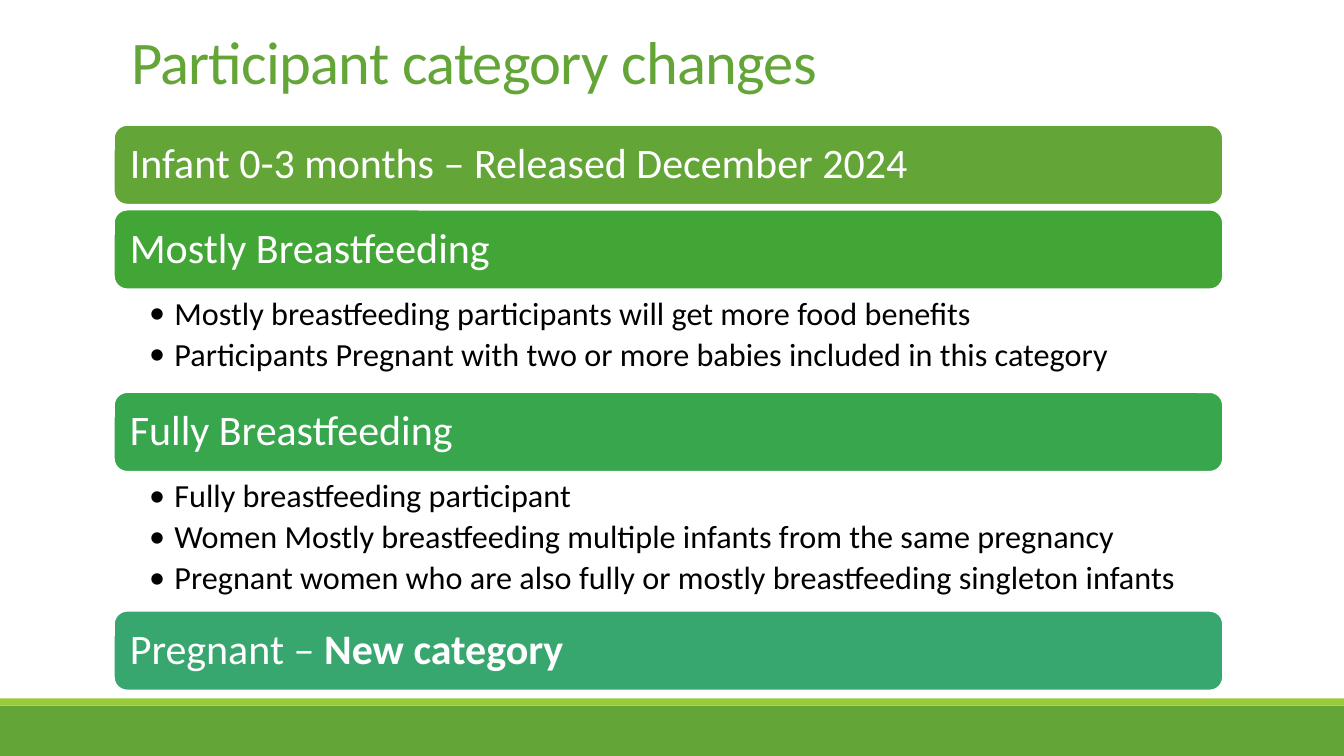
from dataclasses import dataclass
from typing import Any

from lxml.etree import SubElement as Sub
from pptx import Presentation
from pptx.dml.color import RGBColor as RGB
from pptx.enum.shapes import MSO_SHAPE as Kind
from pptx.enum.text import MSO_ANCHOR as Anchor, MSO_AUTO_SIZE as Fit, PP_ALIGN as Align
from pptx.oxml.ns import qn
from pptx.util import Inches, Pt

HUES = {
    "leaf": "63A537", "lime": "99CB38", "grass": "42A637", "fern": "37A64D",
    "jade": "37A76F", "white": "FFFFFF", "black": "000000",
}
LEFT, WIDE, HIGH, GAP = 1.13, 11, 0.79, 0.04


@dataclass(frozen=True)
class Band:
    """A coloured heading with the points listed below it."""
    top: float
    hue: str
    head: str
    bold: str = ""
    tall: float = 0
    points: tuple[str, ...] = ()


BANDS = (
    Band(1.24, "leaf", "Infant 0-3 months – Released December 2024"),
    Band(2.08, "grass", "Mostly Breastfeeding", tall=0.87, points=(
        "Mostly breastfeeding participants will get more food benefits",
        "Participants Pregnant with two or more babies included in this category",
    )),
    Band(3.89, "fern", "Fully Breastfeeding", tall=1.32, points=(
        "Fully breastfeeding participant",
        "Women Mostly breastfeeding multiple infants from the same pregnancy",
        "Pregnant women who are also fully or mostly breastfeeding singleton infants",
    )),
    Band(6.06, "jade", "Pregnant – ", "New category"),
)


def apply(item: Any, form: dict[str, Any]) -> None:
    """Set each named attribute on the item."""
    for name, value in form.items():
        setattr(item, name, value)


def place(shape: Any, left: float, top: float, wide: float, high: float) -> None:
    """Move and size a shape in inches."""
    apply(shape, {"left": Inches(left), "top": Inches(top),
                  "width": Inches(wide), "height": Inches(high)})


def frame(shape: Any, anchor: Any, left: float, right: float, edge: float) -> Any:
    """Format and return the text frame of a shape."""
    text = shape.text_frame
    apply(text, {"word_wrap": True, "auto_size": Fit.NONE, "vertical_anchor": anchor,
                 "margin_left": Inches(left), "margin_right": Inches(right),
                 "margin_top": Inches(edge), "margin_bottom": Inches(edge)})
    return text


def write(para: Any, text: str, size: float, hue: str, bold: bool = False) -> Any:
    """Add a formatted run to a paragraph."""
    run = para.add_run()
    run.text = text
    apply(run.font, {"name": "Calibri", "size": Pt(size), "bold": bold})
    run.font.color.rgb = RGB.from_string(HUES[hue])
    return run


def block(slide: Any, kind: Any, box: tuple[float, ...], hue: str) -> Any:
    """Add a filled shape without line or shadow."""
    shape = slide.shapes.add_shape(kind, *map(Inches, box))
    shape.shadow.inherit = False
    shape.fill.solid()
    shape.fill.fore_color.rgb = RGB.from_string(HUES[hue])
    shape.line.fill.background()
    return shape


def title(shape: Any, text: str) -> None:
    """Fill the title placeholder."""
    place(shape, 1.2, 0.31, 11, 0.7)
    para = frame(shape, Anchor.BOTTOM, 0.1, 0.1, 0.05).paragraphs[0]
    apply(para, {"alignment": Align.LEFT, "line_spacing": 0.85})
    run = write(para, text, 43.2, "leaf")
    run._r.get_or_add_rPr().set("spc", "-50")


def header(slide: Any, band: Band) -> None:
    """Draw the rounded heading of a band."""
    shape = block(slide, Kind.ROUNDED_RECTANGLE, (LEFT, band.top, WIDE, HIGH), band.hue)
    shape.line.color.rgb = RGB.from_string(HUES["white"])
    shape.line.width = Pt(1.25)
    para = frame(shape, Anchor.MIDDLE, 0.12, 0.12, 0.12).paragraphs[0]
    apply(para, {"alignment": Align.LEFT, "line_spacing": 0.9})
    write(para, band.head, 30, "white")
    if band.bold:
        write(para, band.bold, 30, "white", True)


def bullets(shape: Any, band: Band) -> None:
    """Fill a body placeholder with the points of a band."""
    place(shape, LEFT, band.top + HIGH + GAP, WIDE, band.tall)
    text = frame(shape, Anchor.TOP, 0.35, 0.23, 0.04)
    for i, point in enumerate(band.points):
        para = text.add_paragraph() if i else text.paragraphs[0]
        props = para._p.get_or_add_pPr()
        props.set("marL", str(Inches(0.25)))
        props.set("indent", str(Inches(-0.25)))
        Sub(props, qn("a:buFont"), typeface="Calibri")
        Sub(props, qn("a:buChar"), char="•")
        apply(para, {"alignment": Align.LEFT, "line_spacing": 0.9,
                     "space_before": Pt(0), "space_after": Pt(4.5)})
        write(para, point, 23, "black")


def main() -> None:
    """Build and save the slide."""
    deck = Presentation()
    apply(deck, {"slide_width": Inches(13.33), "slide_height": Inches(7.5)})
    slide = deck.slides.add_slide(deck.slide_layouts[3])
    name, *lists = slide.placeholders
    block(slide, Kind.RECTANGLE, (0, 7, 13.33, 0.5), "leaf")
    block(slide, Kind.RECTANGLE, (0, 6.93, 13.33, 0.07), "lime")
    title(name, "Participant category changes")
    for band in BANDS:
        header(slide, band)
    for body, band in zip(lists, (band for band in BANDS if band.points)):
        bullets(body, band)
    deck.save("out.pptx")


if __name__ == "__main__":
    main()
